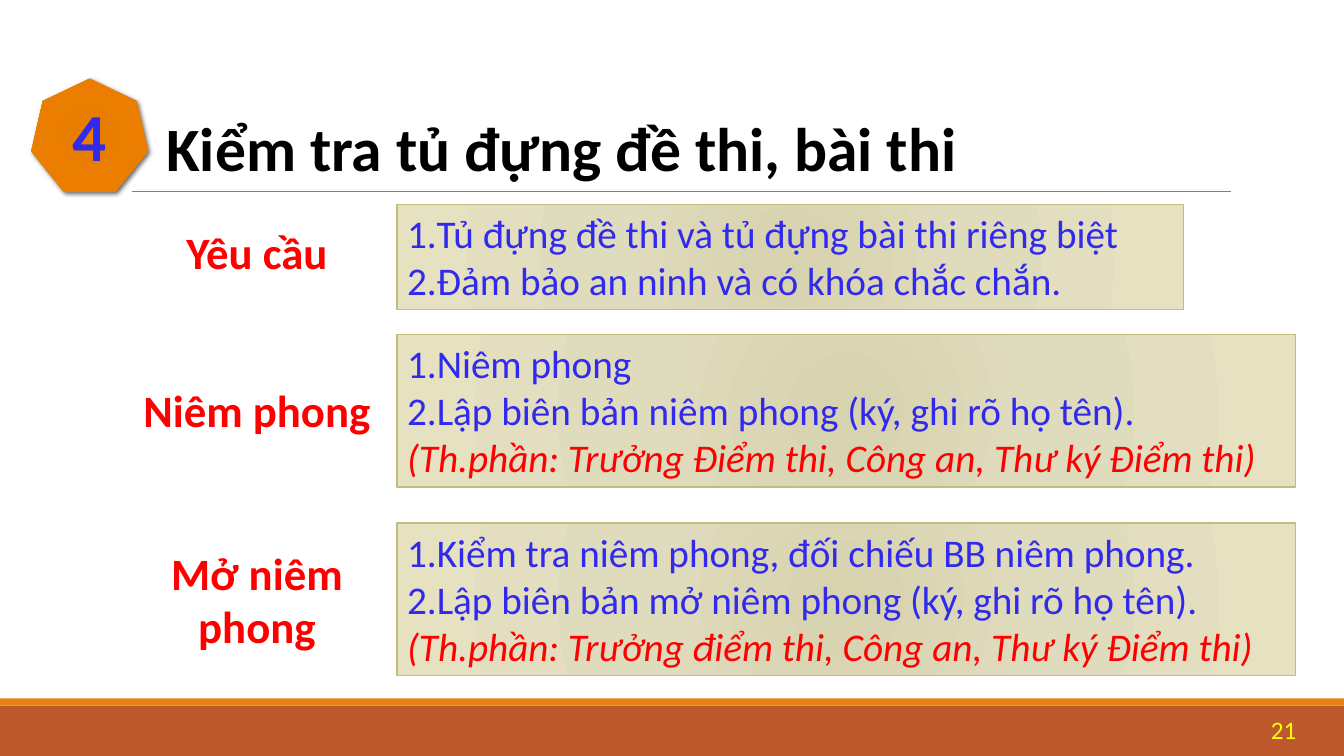
from dataclasses import dataclass

from lxml.etree import SubElement
from pptx import Presentation
from pptx.dml.color import RGBColor
from pptx.enum.shapes import MSO_CONNECTOR as Connector, MSO_SHAPE as Preset
from pptx.enum.text import MSO_ANCHOR as Anchor, PP_ALIGN as Align
from pptx.oxml.ns import qn
from pptx.shapes.autoshape import Shape
from pptx.slide import Slide
from pptx.text.text import TextFrame, _Paragraph as Paragraph
from pptx.util import Inches, Length, Pt

# The grid has cells of a tenth of an inch
COLUMNS, ROWS = 133.33, 75
FONT = "Calibri"

BLACK = RGBColor(0x00, 0x00, 0x00)
RED = RGBColor(0xFF, 0x00, 0x00)
BLUE = RGBColor(0x31, 0x29, 0xEE)
YELLOW = RGBColor(0xFF, 0xFF, 0x00)
GREY = RGBColor(0x80, 0x80, 0x80)
RUST = RGBColor(0xBD, 0x58, 0x2C)
ORANGE = RGBColor(0xE4, 0x83, 0x12)
KHAKI = RGBColor(0xC2, 0xBC, 0x80)
SAND_STOPS = ((0, RGBColor(0xD7, 0xD3, 0xAF)), (45, RGBColor(0xDF, 0xDB, 0xBD)),
              (100, RGBColor(0xE5, 0xE1, 0xC1)))
ORANGE_STOPS = ((0, RGBColor(0xE5, 0x7B, 0x00)), (34, RGBColor(0xE8, 0x7D, 0x00)),
                (70, RGBColor(0xEB, 0x7E, 0x00)), (100, RGBColor(0xEF, 0x84, 0x07)))
Stops = tuple[tuple[int, RGBColor], ...]


@dataclass(frozen=True)
class Area:
    column: float
    row: float
    columns: float
    rows: float

    def lengths(self) -> tuple[Length, ...]:
        return tuple(grid(n) for n in (self.column, self.row, self.columns, self.rows))


@dataclass(frozen=True)
class Stage:
    label: str
    label_area: Area
    panel_area: Area
    steps: tuple[str, ...]
    members: str = ""


STAGES = (
    Stage("Yêu cầu", Area(12.6, 21.8, 25.8, 6.4), Area(39.4, 20.3, 78, 10.4),
          ("Tủ đựng đề thi và tủ đựng bài thi riêng biệt",
           "Đảm bảo an ninh và có khóa chắc chắn.")),
    Stage("Niêm phong", Area(12.6, 37.5, 25.8, 6.4), Area(39.4, 33.2, 89.1, 15.1),
          ("Niêm phong", "Lập biên bản niêm phong (ký, ghi rõ họ tên)."),
          "(Th.phần: Trưởng Điểm thi, Công an, Thư ký Điểm thi)"),
    Stage("Mở niêm phong", Area(12.6, 53.6, 25.8, 11.8), Area(39.4, 51.9, 89.1, 15.1),
          ("Kiểm tra niêm phong, đối chiếu BB niêm phong.",
           "Lập biên bản mở niêm phong (ký, ghi rõ họ tên)."),
          "(Th.phần: Trưởng điểm thi, Công an, Thư ký Điểm thi)"),
)


def grid(cells: float) -> Length:
    return Inches(cells / 10)


def format_text(paragraph: Paragraph, size: float, color: RGBColor,
                align: Align = Align.LEFT, bold: bool = False, italic: bool = False) -> None:
    paragraph.alignment = align
    for run in paragraph.runs:
        run.font.name, run.font.size = FONT, Pt(size)
        run.font.bold, run.font.italic = bold, italic
        run.font.color.rgb = color


def number(paragraph: Paragraph) -> None:
    properties = paragraph._p.get_or_add_pPr()
    properties.set("marL", "0")
    properties.set("indent", str(-Inches(0.56)))
    SubElement(properties, qn("a:buFont"), typeface="+mj-lt")
    SubElement(properties, qn("a:buAutoNum"), type="arabicPeriod")


def fill_radial(shape: Shape, stops: Stops) -> None:
    shape.fill.gradient()
    gradient = shape._element.spPr.find(qn("a:gradFill"))
    for child in list(gradient):
        gradient.remove(child)
    stop_list = SubElement(gradient, qn("a:gsLst"))
    for percent, color in stops:
        stop = SubElement(stop_list, qn("a:gs"), pos=str(percent * 1000))
        SubElement(stop, qn("a:srgbClr"), val=str(color))
    circle = SubElement(gradient, qn("a:path"), attrib={"path": "circle"})
    SubElement(circle, qn("a:fillToRect"), attrib=dict.fromkeys("ltrb", "100000"))


def add_preset(slide: Slide, preset: Preset, area: Area) -> Shape:
    shape = slide.shapes.add_shape(preset, *area.lengths())
    shape.shadow.inherit = False
    shape.line.fill.background()
    return shape


def add_bar(slide: Slide, area: Area, color: RGBColor) -> None:
    bar = add_preset(slide, Preset.RECTANGLE, area)
    bar.fill.solid()
    bar.fill.fore_color.rgb = color


def add_text(slide: Slide, area: Area, text: str, size: float, color: RGBColor,
             align: Align, bold: bool = False, anchor: Anchor = Anchor.TOP) -> None:
    frame: TextFrame = slide.shapes.add_textbox(*area.lengths()).text_frame
    frame.word_wrap = True
    frame.vertical_anchor = anchor
    frame.text = text
    format_text(frame.paragraphs[0], size, color, align, bold)


def add_title(slide: Slide, area: Area, text: str) -> None:
    title = slide.shapes.title
    title.left, title.top, title.width, title.height = area.lengths()
    title.text_frame.text = text
    title.text_frame.word_wrap = True
    title.text_frame.vertical_anchor = Anchor.TOP
    format_text(title.text_frame.paragraphs[0], 44, BLACK, bold=True)


def add_rule(slide: Slide, start: float, end: float, row: float) -> None:
    rule = slide.shapes.add_connector(
        Connector.STRAIGHT, grid(start), grid(row), grid(end), grid(row))
    rule.line.color.rgb = GREY
    rule.line.width = Pt(0.5)
    SubElement(rule._element.spPr, qn("a:effectLst"))


def add_badge(slide: Slide, area: Area, text: str) -> None:
    badge = add_preset(slide, Preset.HEPTAGON, area)
    fill_radial(badge, ORANGE_STOPS)
    effects = badge._element.spPr.find(qn("a:effectLst"))
    shadow = SubElement(effects, qn("a:outerShdw"), blurRad=str(Pt(3.5)),
                        dist=str(Pt(2)), dir=str(45 * 60000))
    shade = SubElement(shadow, qn("a:srgbClr"), val=str(BLACK))
    SubElement(shade, qn("a:alpha"), val="60000")
    badge.text_frame.text = text
    badge.text_frame.vertical_anchor = Anchor.MIDDLE
    format_text(badge.text_frame.paragraphs[0], 48, BLUE, Align.CENTER, bold=True)


def add_stage(slide: Slide, stage: Stage) -> None:
    panel = add_preset(slide, Preset.RECTANGLE, stage.panel_area)
    fill_radial(panel, SAND_STOPS)
    panel.line.color.rgb = KHAKI
    panel.line.width = Pt(1)
    frame = panel.text_frame
    frame.word_wrap = True
    frame.vertical_anchor = Anchor.TOP
    frame.text = "\n".join(stage.steps)
    for step in frame.paragraphs:
        format_text(step, 28, BLUE)
        number(step)
    if stage.members:
        members = frame.add_paragraph()
        members.text = stage.members
        format_text(members, 28, RED, italic=True)
    add_text(slide, stage.label_area, stage.label, 32, RED, Align.CENTER, bold=True)


def main() -> None:
    deck = Presentation()
    deck.slide_width, deck.slide_height = grid(COLUMNS), grid(ROWS)
    slide = deck.slides.add_slide(deck.slide_layouts[5])

    # Footer bars and the rule under the title
    add_bar(slide, Area(0, 70, COLUMNS, 5), RUST)
    add_bar(slide, Area(0, 69.3, COLUMNS, 0.7), ORANGE)
    add_rule(slide, 13.1, 122.1, 19)

    # Heading with its number
    add_title(slide, Area(15.5, 10.4, 111, 8.4), "Kiểm tra tủ đựng đề thi, bài thi")
    add_badge(slide, Area(3.1, 7.8, 11.6, 11.2), "4")

    # Stages, each a label and a panel
    for stage in STAGES:
        add_stage(slide, stage)

    # Page number
    add_text(slide, Area(115.3, 70.4, 14.3, 4), "21", 18, YELLOW, Align.RIGHT,
             anchor=Anchor.MIDDLE)
    deck.save("out.pptx")


if __name__ == "__main__":
    main()
